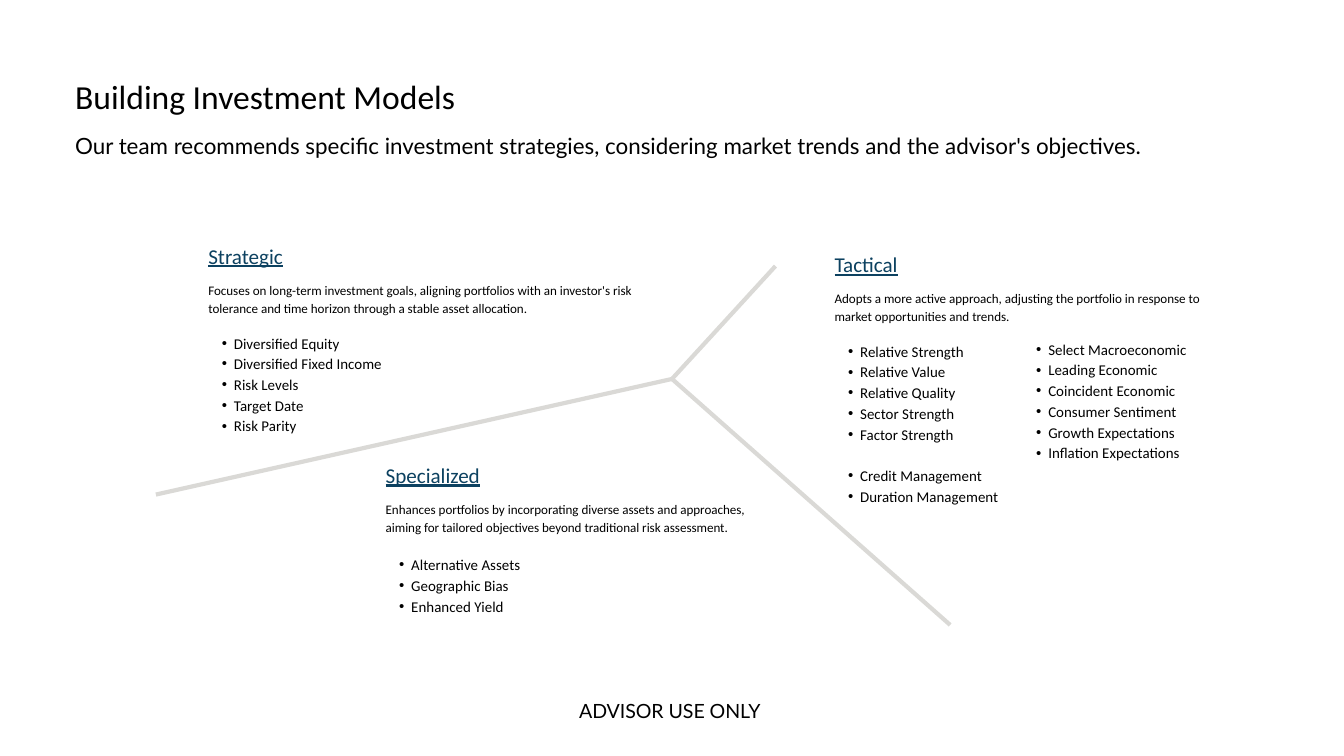
from dataclasses import dataclass

from lxml.etree import SubElement
from pptx import Presentation
from pptx.dml.color import RGBColor
from pptx.enum.shapes import MSO_CONNECTOR
from pptx.enum.text import MSO_AUTO_SIZE, PP_ALIGN
from pptx.oxml.ns import qn
from pptx.util import Inches, Pt


@dataclass(frozen=True)
class Theme:
    ink: str = "000000"
    head: str = "0C4160"
    rule: str = "DAD9D6"
    main: str = "Calibri"
    alt: str = "Lato"
    title: float = 18
    lead: float = 12
    foot: float = 10.5
    topic: float = 11.3
    body: float = 7
    item: float = 8


THEME = Theme()
HUB = (5, 2.82)
ENDS = [(1.16, 3.68), (5.77, 1.98), (7.07, 4.65)]

# Each topic: left, top, width, name, summary, gap above the list, groups of items
TOPICS = [
    (1.55, 1.78, 3.19, "Strategic",
     "Focuses on long-term investment goals, aligning portfolios with an "
     "investor's risk tolerance and time horizon through a stable asset allocation.",
     8.3,
     [["Diversified Equity", "Diversified Fixed Income", "Risk Levels",
       "Target Date", "Risk Parity"]]),
    (2.87, 3.41, 2.9, "Specialized",
     "Enhances portfolios by incorporating diverse assets and approaches, "
     "aiming for tailored objectives beyond traditional risk assessment.",
     9.7,
     [["Alternative Assets", "Geographic Bias", "Enhanced Yield"]]),
    (6.21, 1.84, 2.85, "Tactical",
     "Adopts a more active approach, adjusting the portfolio in response to "
     "market opportunities and trends.",
     8.3,
     [["Relative Strength", "Relative Value", "Relative Quality",
       "Sector Strength", "Factor Strength"],
      ["Credit Management", "Duration Management"]]),
]
SIGNALS = ["Select Macroeconomic", "Leading Economic", "Coincident Economic",
           "Consumer Sentiment", "Growth Expectations", "Inflation Expectations"]
ITEM_LINE = 11.1


def add_box(slide, left, top, width, height, inset=0):
    box = slide.shapes.add_textbox(
        Inches(left), Inches(top), Inches(width), Inches(height))
    frame = box.text_frame
    frame.word_wrap = True
    frame.auto_size = MSO_AUTO_SIZE.SHAPE_TO_FIT_TEXT
    frame.margin_left = frame.margin_right = Inches(inset)
    frame.margin_top = frame.margin_bottom = Inches(inset / 2)
    return frame


def style(para, size, line=None, font=THEME.main, color=THEME.ink):
    if line:
        para.line_spacing = Pt(line)
    for run in para.runs:
        run.font.name = font
        run.font.size = Pt(size)
        run.font.color.rgb = RGBColor.from_string(color)


def add_line(slide, text, place, size, line=None, font=THEME.main,
             color=THEME.ink, inset=0):
    """Add a box that holds one paragraph, and return that paragraph."""
    para = add_box(slide, *place, inset).paragraphs[0]
    para.text = text
    style(para, size, line, font, color)
    return para


def set_item(para, text, gap=0):
    para.text = text
    props = para._p.get_or_add_pPr()
    props.set("lvl", "1")
    props.set("marL", str(Inches(0.19)))
    props.set("indent", str(Inches(-0.09)))
    SubElement(props, qn("a:buFont"), typeface="Arial")
    SubElement(props, qn("a:buChar"), char="•")
    if gap:
        para.space_before = Pt(gap)
    style(para, THEME.item, ITEM_LINE)


def add_topic(slide, left, top, width, name, about, gap, groups):
    head = add_line(slide, name, (left, top, width, 0.2), THEME.topic, 15.8,
                    color=THEME.head)
    head.runs[0].font.underline = True
    frame = add_box(slide, left, top + 0.3, width, 1.15)
    para = frame.paragraphs[0]
    para.text = about
    style(para, THEME.body, 9.7)
    for group in groups:
        for item in group:
            set_item(frame.add_paragraph(), item, gap)
            gap = 0
        gap = ITEM_LINE


def add_list(slide, place, items):
    frame = add_box(slide, *place)
    for index, item in enumerate(items):
        para = frame.add_paragraph() if index else frame.paragraphs[0]
        set_item(para, item)


def add_spoke(slide, end):
    x, y = end
    spoke = slide.shapes.add_connector(
        MSO_CONNECTOR.STRAIGHT, Inches(x), Inches(y), *map(Inches, HUB))
    spoke.line.color.rgb = RGBColor.from_string(THEME.rule)
    spoke.line.width = Pt(2.25)
    SubElement(spoke._element.spPr, qn("a:effectLst"))


def main():
    deck = Presentation()
    deck.slide_width = Inches(10)
    deck.slide_height = deck.slide_width * 9 // 16
    slide = deck.slides.add_slide(deck.slide_layouts[6])

    for topic in TOPICS:
        add_topic(slide, *topic)
    add_list(slide, (7.61, 2.51, 1.74, 0.92), SIGNALS)
    for end in ENDS:
        add_spoke(slide, end)

    add_line(slide, "Building Investment Models", (0.56, 0.54, 5.96, 0.32),
             THEME.title, 23.6)
    add_line(slide, "Our team recommends specific investment strategies, "
             "considering market trends and the advisor's objectives.",
             (0.56, 0.9, 8.69, 0.25), THEME.lead, 20.4, THEME.alt)
    foot = add_line(slide, "ADVISOR USE ONLY", (3.32, 5.15, 3.33, 0.29),
                    THEME.foot, font=THEME.alt, inset=0.1)
    foot.alignment = PP_ALIGN.CENTER

    deck.save("out.pptx")


if __name__ == "__main__":
    main()
